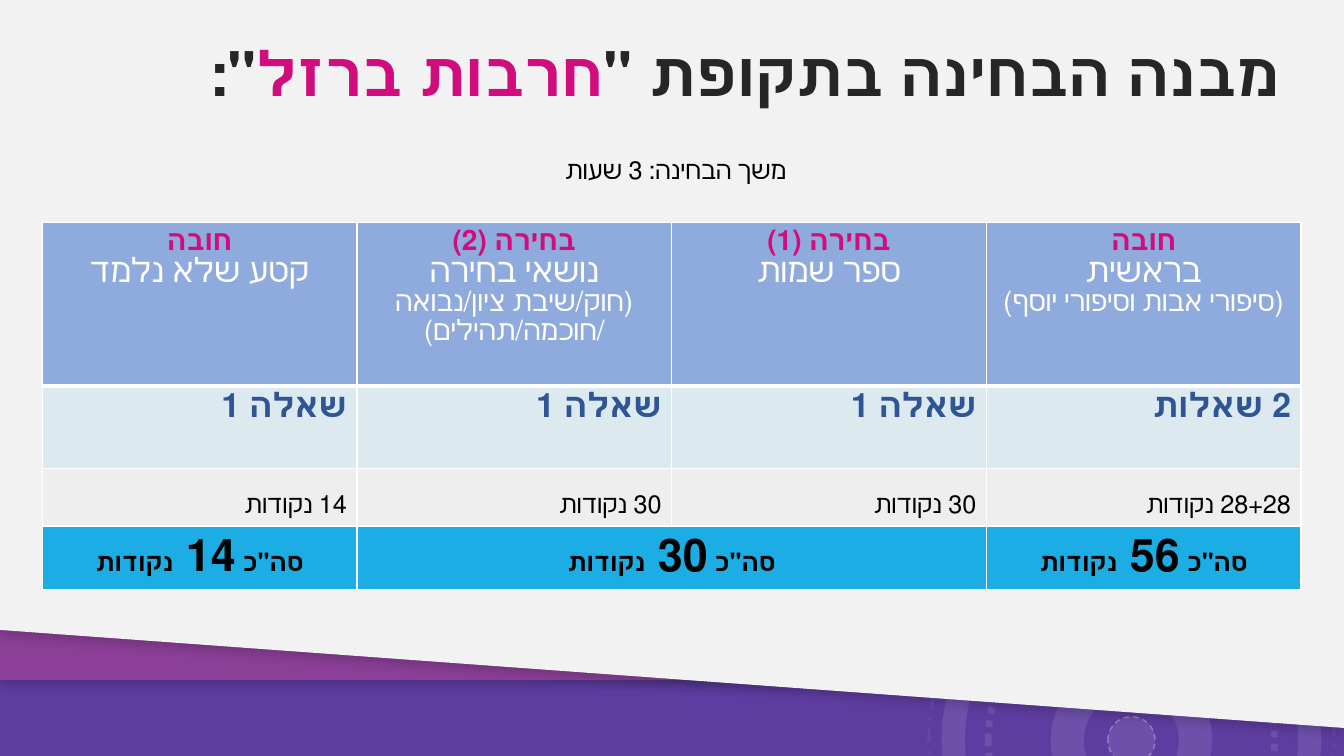
from lxml.etree import SubElement
from pptx import Presentation
from pptx.dml.color import RGBColor
from pptx.enum.dml import MSO_LINE_DASH_STYLE as Dash
from pptx.enum.shapes import MSO_SHAPE as Shape
from pptx.enum.text import MSO_ANCHOR as Anchor, PP_ALIGN as Align
from pptx.oxml.ns import qn
from pptx.util import Pt

WHITE = RGBColor(0xFF, 0xFF, 0xFF)
BLACK = RGBColor(0, 0, 0)
VIOLET = RGBColor(0x5E, 0x3D, 0xA1)
PLUM = RGBColor(0x8B, 0x3F, 0x97)
PAPER = RGBColor(0xF2, 0xF2, 0xF2)
INK = RGBColor(0x26, 0x26, 0x26)
PINK = RGBColor(0xD1, 0x0C, 0x7D)
PERIWINKLE = RGBColor(0x8F, 0xAA, 0xDC)
NAVY = RGBColor(0x2F, 0x55, 0x97)
SKY = RGBColor(0x1C, 0xAD, 0xE4)
GRAY = RGBColor(0xD9, 0xD9, 0xD9)

FONT = "Calibri"
WIDTH, HEIGHT = 960, 540
COLUMN_WIDTH = 224.8
ROW_HEIGHTS = (116.6, 59, 41, 39)
HEADERS = (
    ("חובה", "קטע שלא נלמד", ()),
    ("בחירה (2)", "נושאי בחירה", ("(חוק/שיבת ציון/נבואה", "/חוכמה/תהילים)")),
    ("בחירה (1)", "ספר שמות", ()),
    ("חובה", "בראשית", ("(סיפורי אבות וסיפורי יוסף)",)),
)
QUESTIONS = ("שאלה 1", "שאלה 1", "שאלה 1", "2 שאלות")
POINTS = ("14 נקודות", "30 נקודות", "30 נקודות", "28+28 נקודות")
TOTALS = {0: "14", 1: "30", 3: "56"}


def set_alpha(fill_parent, percent):
    color = fill_parent.find(qn("a:solidFill"))[0]
    SubElement(color, qn("a:alpha"), val=str(percent * 1000))


def paint(fill, color, parent, alpha=100):
    fill.solid()
    fill.fore_color.rgb = color
    if alpha < 100:
        set_alpha(parent, alpha)


def write_lines(frame, lines, align):
    for index, runs in enumerate(lines):
        para = frame.paragraphs[0] if index == 0 else frame.add_paragraph()
        para.alignment = align
        para._p.get_or_add_pPr().set("rtl", "1")
        for text, size, color, bold in runs:
            span = para.add_run()
            span.text = text
            span.font.name = FONT
            span.font.size = Pt(size)
            span.font.bold = bold
            span.font.color.rgb = color


def add_text(slide, box, runs, anchor=Anchor.TOP):
    frame = slide.shapes.add_textbox(*map(Pt, box)).text_frame
    frame.word_wrap = True
    frame.vertical_anchor = anchor
    write_lines(frame, [runs], Align.RIGHT)
    return frame


def add_ring(slide, center, size, preset=Shape.OVAL, thickness=None, fill_alpha=None, line=None):
    x, y = center
    ring = slide.shapes.add_shape(preset, Pt(x - size / 2), Pt(y - size / 2), Pt(size), Pt(size))
    ring.shadow.inherit = False
    if thickness:
        ring.adjustments[0] = thickness
    if fill_alpha:
        paint(ring.fill, WHITE, ring._element.spPr, fill_alpha)
    else:
        ring.fill.background()
    if line:
        width, dash, alpha = line
        paint(ring.line.fill, WHITE, ring._element.spPr.find(qn("a:ln")), alpha)
        ring.line.width = Pt(width)
        ring.line.dash_style = dash
    else:
        ring.line.fill.background()


def add_rings(slide, center):
    add_ring(slide, center, 115.2, Shape.DONUT, 0.205, 10)
    add_ring(slide, center, 271, Shape.DONUT, 0.061, 10)
    add_ring(slide, center, 289.4, line=(2, Dash.DASH_DOT, 5))
    add_ring(slide, center, 204.5, line=(4.75, Dash.ROUND_DOT, 10))
    add_ring(slide, center, 33.8, fill_alpha=10, line=(1, Dash.DASH, 30))


def add_panel(slide, left_depth, right_depth, color):
    builder = slide.shapes.build_freeform(0, 0, scale=Pt(1))
    builder.add_line_segments([(WIDTH, 0), (WIDTH, right_depth), (0, left_depth)], close=True)
    panel = builder.convert_to_shape()
    panel.shadow.inherit = False
    paint(panel.fill, color, panel._element.spPr)
    panel.line.fill.background()
    effects = panel._element.spPr.find(qn("a:effectLst"))
    shadow = SubElement(effects, qn("a:outerShdw"), blurRad=str(Pt(8)), dist=str(Pt(4)),
                        dir="5400000", algn="t", rotWithShape="0")
    tint = SubElement(shadow, qn("a:srgbClr"), val=str(BLACK))
    SubElement(tint, qn("a:alpha"), val="20000")


def style_cell(cell, fill, alpha, bottom_width):
    properties = cell._tc.get_or_add_tcPr()
    for side, width in (("lnL", 1), ("lnR", 1), ("lnT", 1), ("lnB", bottom_width)):
        edge = SubElement(properties, qn(f"a:{side}"), w=str(Pt(width)))
        SubElement(SubElement(edge, qn("a:solidFill")), qn("a:srgbClr"), val=str(WHITE))
    paint(cell.fill, fill, properties, alpha)


def header_lines(status, subject, details):
    return [[(status, 20, PINK, True)], [(subject, 24, WHITE, False)],
            *([(detail, 20, WHITE, False)] for detail in details)]


def add_exam_table(slide, left, top):
    frame = slide.shapes.add_table(4, 4, Pt(left), Pt(top), Pt(4 * COLUMN_WIDTH), Pt(sum(ROW_HEIGHTS)))
    table = frame.table
    for column in table.columns:
        column.width = Pt(COLUMN_WIDTH)
    for row, height in zip(table.rows, ROW_HEIGHTS):
        row.height = Pt(height)
    styles = ((PERIWINKLE, 100, 3), (SKY, 10, 1), (GRAY, 13, 1), (SKY, 100, 1))
    for row, style in zip(table.rows, styles):
        for cell in row.cells:
            style_cell(cell, *style)
    table.cell(3, 1).merge(table.cell(3, 2))

    for index in range(4):
        header, question, points, total = (table.cell(row, index) for row in range(4))
        write_lines(header.text_frame, header_lines(*HEADERS[index]), Align.CENTER)
        write_lines(question.text_frame, [[(QUESTIONS[index], 24, NAVY, True)]], Align.RIGHT)
        write_lines(points.text_frame, [[(POINTS[index], 18, BLACK, False)]], Align.RIGHT)
        points.vertical_anchor = Anchor.BOTTOM
        points.margin_bottom = Pt(5)
        if index in TOTALS:
            runs = [('סה"כ ', 18, BLACK, True), (TOTALS[index] + " ", 32, BLACK, True),
                    ("נקודות", 18, BLACK, True)]
            write_lines(total.text_frame, [runs], Align.CENTER)
            total.vertical_anchor = Anchor.MIDDLE


def build_exam_slide(deck):
    slide = deck.slides.add_slide(deck.slide_layouts[6])
    slide.background.fill.solid()
    slide.background.fill.fore_color.rgb = VIOLET
    add_rings(slide, (808.2, 528.8))
    add_panel(slide, 486, 486, PLUM)
    add_panel(slide, 450, 520.5, PAPER)
    title = add_text(slide, (58.3, 26, 863.3, 56.9),
                     [('מבנה הבחינה בתקופת "', 44, INK, True), ("חרבות ברזל", 44, PINK, True),
                      ('":', 44, INK, True)], Anchor.MIDDLE)
    title.paragraphs[0].line_spacing = 0.9
    add_exam_table(slide, 30.2, 159.1)
    add_text(slide, (224.6, 106.6, 344.2, 28.8), [("משך הבחינה: 3 שעות", 18, BLACK, False)])


def main():
    deck = Presentation()
    deck.slide_width, deck.slide_height = Pt(WIDTH), Pt(HEIGHT)
    build_exam_slide(deck)
    deck.save("out.pptx")


if __name__ == "__main__":
    main()
